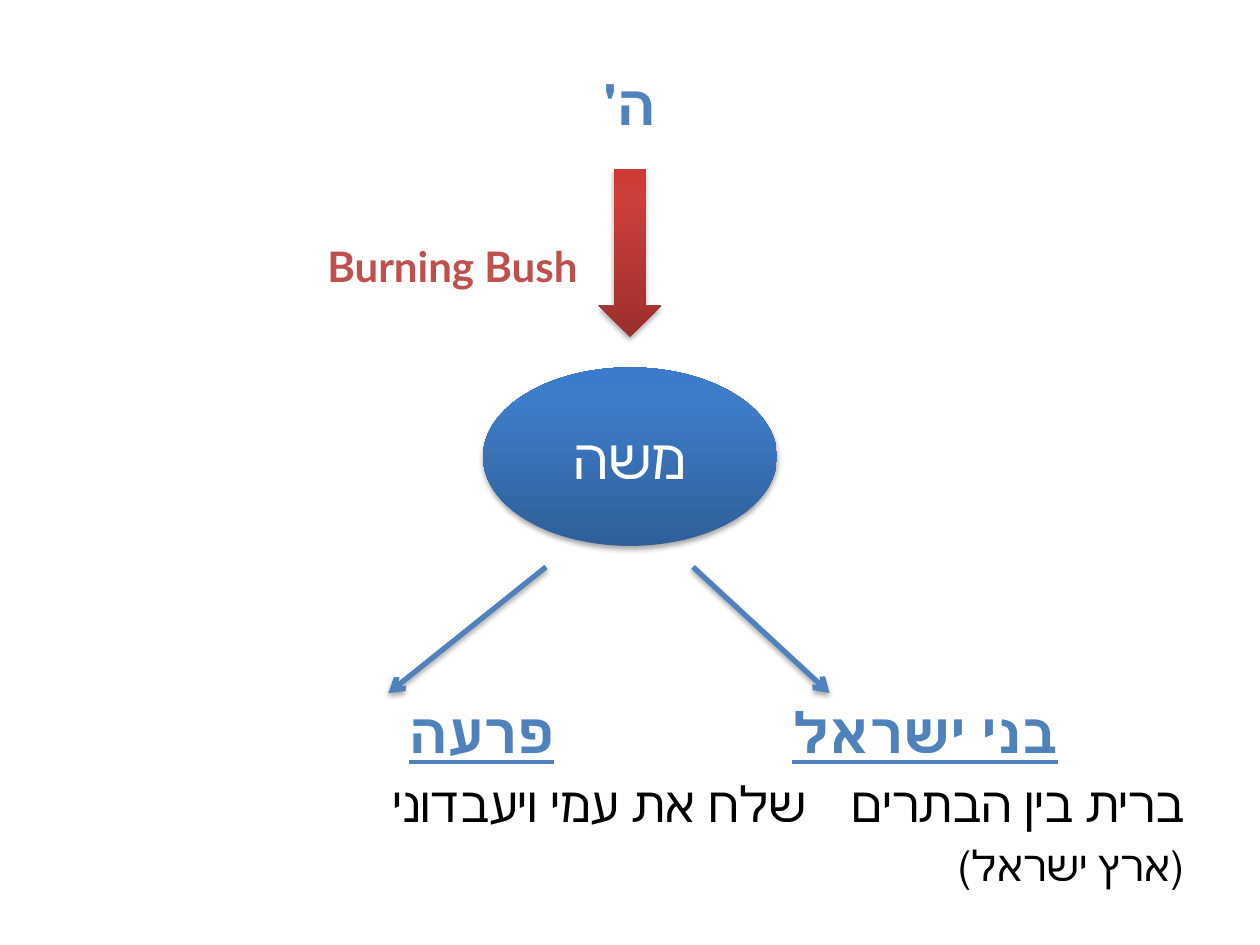
from copy import deepcopy

from lxml.etree import SubElement
from pptx import Presentation
from pptx.dml.color import RGBColor
from pptx.enum.shapes import MSO_CONNECTOR, MSO_SHAPE
from pptx.enum.text import MSO_ANCHOR, PP_ALIGN
from pptx.oxml import parse_xml
from pptx.oxml.ns import nsdecls, qn
from pptx.util import Inches, Pt

BLUE, RED, BLACK, WHITE = "4F81BD", "C0504D", "000000", "FFFFFF"
BLUE_SHADES = ("2F5F99", "3D7CC7", "3A7CCB")
RED_SHADES = ("9C2F2D", "CB3E3A", "CE3B37")
SHADOW = (
    f'<a:effectLst {nsdecls("a")}><a:outerShdw blurRad="40000" dist="23000" '
    'dir="5400000" rotWithShape="0"><a:srgbClr val="000000">'
    '<a:alpha val="35000"/></a:srgbClr></a:outerShdw></a:effectLst>'
)


def color(code):
    return RGBColor.from_string(code)


def write(frame, text, size=32, ink=BLACK, bold=False, underline=False,
          align=PP_ALIGN.CENTER, rtl=True, font="Lato"):
    frame.margin_left = frame.margin_right = 0
    frame.margin_top = frame.margin_bottom = 0
    frame.vertical_anchor = MSO_ANCHOR.MIDDLE
    frame.word_wrap = True
    paragraph = frame.paragraphs[0]
    paragraph.alignment = align
    paragraph._p.get_or_add_pPr().set("rtl", str(int(rtl)))
    run = paragraph.add_run()
    run.text = text
    run.font.size = Pt(size)
    run.font.bold = bold
    run.font.underline = underline
    run.font.color.rgb = color(ink)
    run.font.name = font


class Diagram:
    """Draws elements on a slide whose grid has twelve cells to the inch."""

    def __init__(self, slide):
        self.slide = slide

    def cells(self, *counts):
        return [Inches(count / 12) for count in counts]

    def label(self, text, right, middle, width, height=6, **style):
        box = self.slide.shapes.add_textbox(
            *self.cells(right - width, middle - height / 2, width, height))
        write(box.text_frame, text, **style)

    def solid(self, kind, col, row, width, height, shades):
        shape = self.slide.shapes.add_shape(
            kind, *self.cells(col, row, width, height))
        shape.line.fill.background()
        shape.fill.gradient()
        shape.fill.gradient_angle = 90
        stop_list = shape._element.spPr.find(".//" + qn("a:gsLst"))
        stop_list.append(deepcopy(stop_list[-1]))
        for stop, shade, position in zip(
                shape.fill.gradient_stops, shades, (0, 0.8, 1)):
            stop.color.rgb = color(shade)
            stop.position = position
        shape._element.spPr.append(parse_xml(SHADOW))
        return shape

    def arrow(self, start, end):
        line = self.slide.shapes.add_connector(
            MSO_CONNECTOR.STRAIGHT, *self.cells(*start, *end))
        line.line.color.rgb = color(BLUE)
        line.line.width = Pt(3)
        SubElement(line.line._get_or_add_ln(), qn("a:tailEnd"), type="arrow")
        line._element.spPr.append(parse_xml(SHADOW))


def main():
    deck = Presentation()
    deck.slide_width, deck.slide_height = Inches(10), Inches(7.5)
    diagram = Diagram(deck.slides.add_slide(deck.slide_layouts[6]))

    diagram.label("ה'", 66, 9.8, 12, ink=BLUE, bold=True)
    diagram.label("Burning Bush", 55, 25.3, 30, size=24, ink=RED, bold=True,
                  align=PP_ALIGN.RIGHT, rtl=False)

    diagram.solid(MSO_SHAPE.DOWN_ARROW, 57, 16.1, 6, 16, RED_SHADES)
    moses = diagram.solid(MSO_SHAPE.OVAL, 46, 35, 28, 17, BLUE_SHADES)
    write(moses.text_frame, "משה", ink=WHITE)
    diagram.arrow((52, 54), (37, 66))
    diagram.arrow((66, 54), (79, 66))

    edge, tab = 112.8, 12
    for name, tabs in (("בני ישראל", 1), ("פרעה", 5)):
        diagram.label(name, edge - tabs * tab, 69.6, 32, ink=BLUE, bold=True,
                      underline=True, align=PP_ALIGN.RIGHT)
    for message, tabs, middle, size in (
            ("ברית בין הבתרים", 0, 76.5, 28),
            ("שלח את עמי ויעבדוני", 3, 76.5, 28),
            ("(ארץ ישראל)", 0, 82.4, 24)):
        diagram.label(message, edge - tabs * tab, middle, 48, size=size,
                      align=PP_ALIGN.RIGHT)

    deck.save("out.pptx")


if __name__ == "__main__":
    main()
